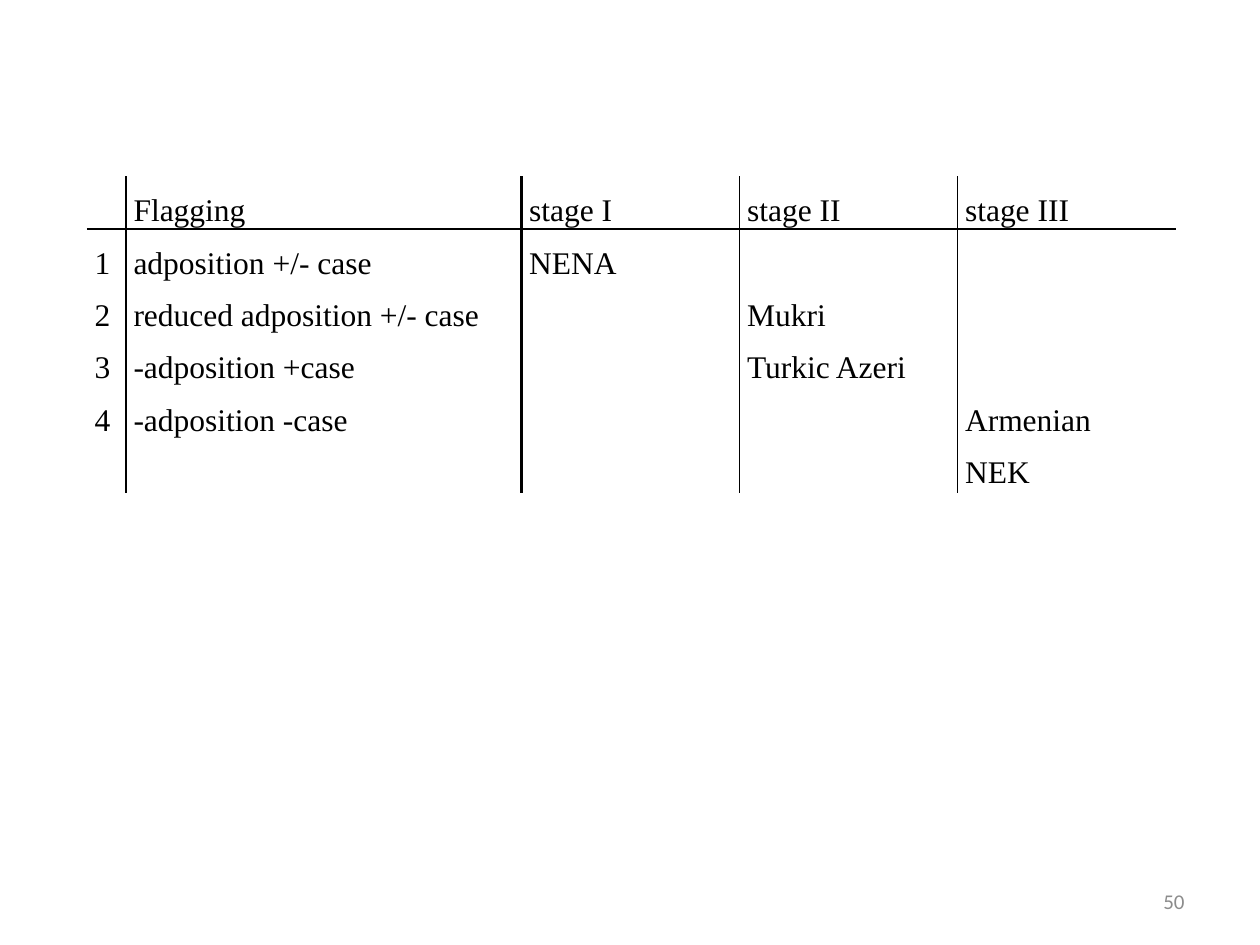
from lxml.etree import SubElement
from pptx import Presentation
from pptx.dml.color import RGBColor
from pptx.enum.text import MSO_ANCHOR, PP_ALIGN
from pptx.oxml.ns import qn
from pptx.util import Inches, Pt

COLORS = {"ink": "000000", "muted": "8C8C8C"}
NO_GRID_STYLE = "{2D5ABB26-0587-4C30-8999-92F81FD0307C}"

COLUMN_WIDTHS = [0.31, 3.14, 1.73, 1.73, 1.73]
ROW_HEIGHTS = [0.4, 0.4, 0.4, 0.4, 0.85]
COLUMN_RULES = [1.5, 1.5, 1, 1]  # widths in points, between neighbouring columns
HEADER_RULE = 1.5
ROWS = [
    ["", "Flagging", "stage I", "stage II", "stage III"],
    ["1", "adposition +/- case", "NENA", "", ""],
    ["2", "reduced adposition +/- case", "", "Mukri", ""],
    ["3", "-adposition +case", "", "Turkic Azeri", ""],
    ["4", "-adposition -case", "", "", "Armenian\nNEK"],
]


def write_text(frame, text, font="Times New Roman", size=18, color="ink",
               align=PP_ALIGN.JUSTIFY, spacing=None):
    """Fill a text frame, one paragraph for each line of the text."""
    frame.text = text
    for paragraph in frame.paragraphs:
        paragraph.alignment = align
        paragraph.line_spacing = spacing
        paragraph.font.name = font
        paragraph.font.size = Pt(size)
        for run in paragraph.runs:
            run.font.name = font
            run.font.size = Pt(size)
            run.font.color.rgb = RGBColor.from_string(COLORS[color])


def set_borders(cell, **widths):
    """Draw the sides L, R, T and B that have a width in points; clear the rest."""
    properties = cell._tc.get_or_add_tcPr()
    for side in "LRTB":
        width = widths.get(side)
        line = SubElement(properties, qn(f"a:ln{side}"), w=str(Pt(width or 0)))
        if width:
            fill = SubElement(line, qn("a:solidFill"))
            SubElement(fill, qn("a:srgbClr"), val=COLORS["ink"])
        else:
            SubElement(line, qn("a:noFill"))


class SlideBuilder:
    def __init__(self, slide):
        self.slide = slide

    def add_table(self, left, top, rows, column_widths, row_heights):
        table = self.slide.shapes.add_table(
            len(rows), len(column_widths), Inches(left), Inches(top),
            Inches(sum(column_widths)), Inches(sum(row_heights))).table
        table.first_row = table.horz_banding = False
        table._tbl.tblPr.find(qn("a:tableStyleId")).text = NO_GRID_STYLE
        for column, width in zip(table.columns, column_widths):
            column.width = Inches(width)
        for row, height in zip(table.rows, row_heights):
            row.height = Inches(height)

        rules = [None, *COLUMN_RULES, None]
        for row_index, texts in enumerate(rows):
            for column_index, text in enumerate(texts):
                cell = table.cell(row_index, column_index)
                cell.margin_left = cell.margin_right = Inches(0.06)
                cell.margin_top = cell.margin_bottom = 0
                write_text(cell.text_frame, text, spacing=1.5)
                set_borders(cell, L=rules[column_index], R=rules[column_index + 1],
                            T=HEADER_RULE if row_index == 1 else None,
                            B=HEADER_RULE if row_index == 0 else None)
                cell.fill.background()

    def add_text(self, text, left, top, width, height, **style):
        box = self.slide.shapes.add_textbox(
            Inches(left), Inches(top), Inches(width), Inches(height))
        frame = box.text_frame
        frame.word_wrap = True
        frame.vertical_anchor = MSO_ANCHOR.MIDDLE
        write_text(frame, text, **style)


def main():
    presentation = Presentation()
    presentation.slide_width = Inches(10)
    presentation.slide_height = Inches(7.5)
    blank_layout = presentation.slide_layouts[6]
    builder = SlideBuilder(presentation.slides.add_slide(blank_layout))

    builder.add_table(0.69, 1.4, ROWS, COLUMN_WIDTHS, ROW_HEIGHTS)
    builder.add_text("50", 7.17, 6.95, 2.33, 0.4, font="Calibri", size=12,
                     color="muted", align=PP_ALIGN.RIGHT)
    presentation.save("out.pptx")


if __name__ == "__main__":
    main()
